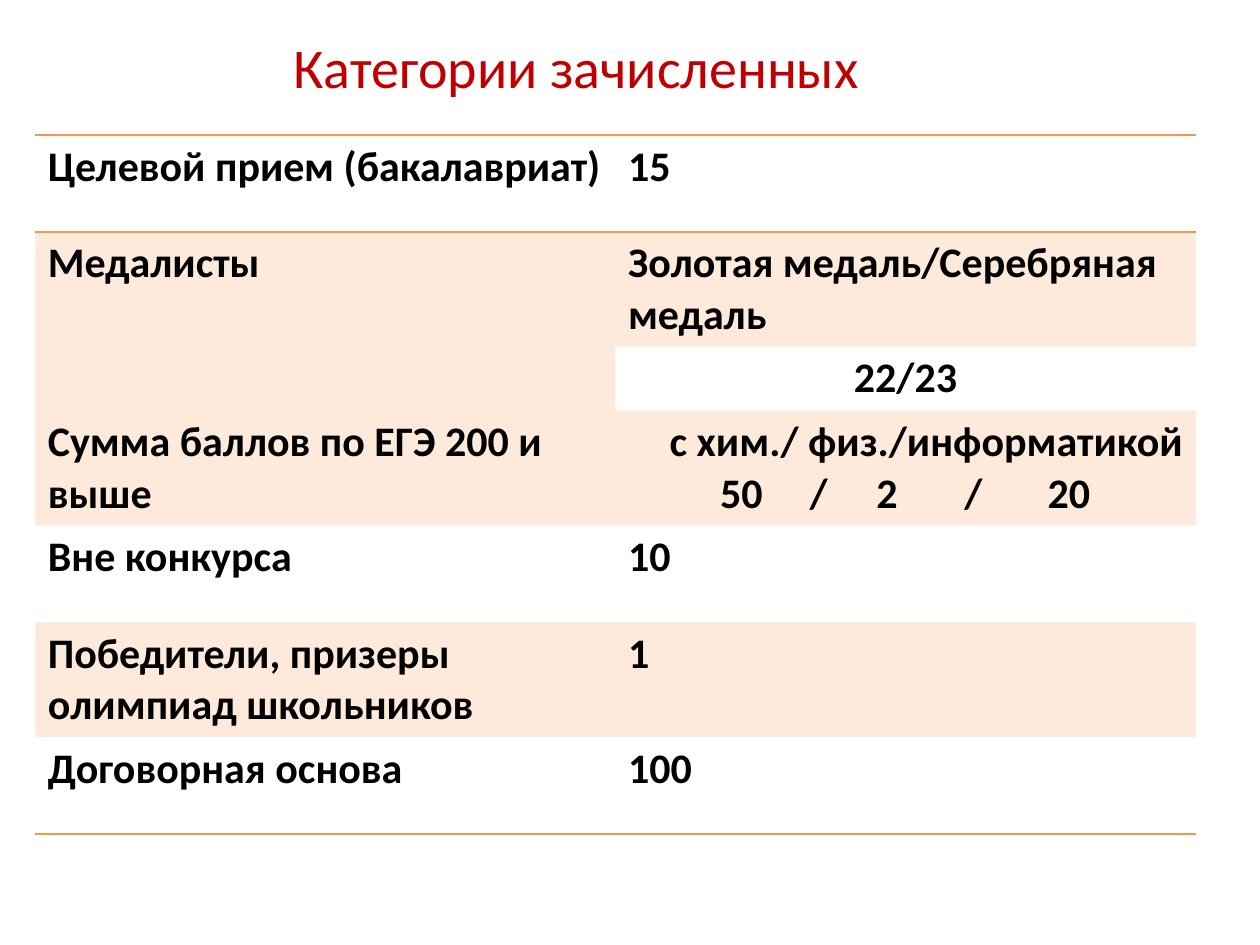
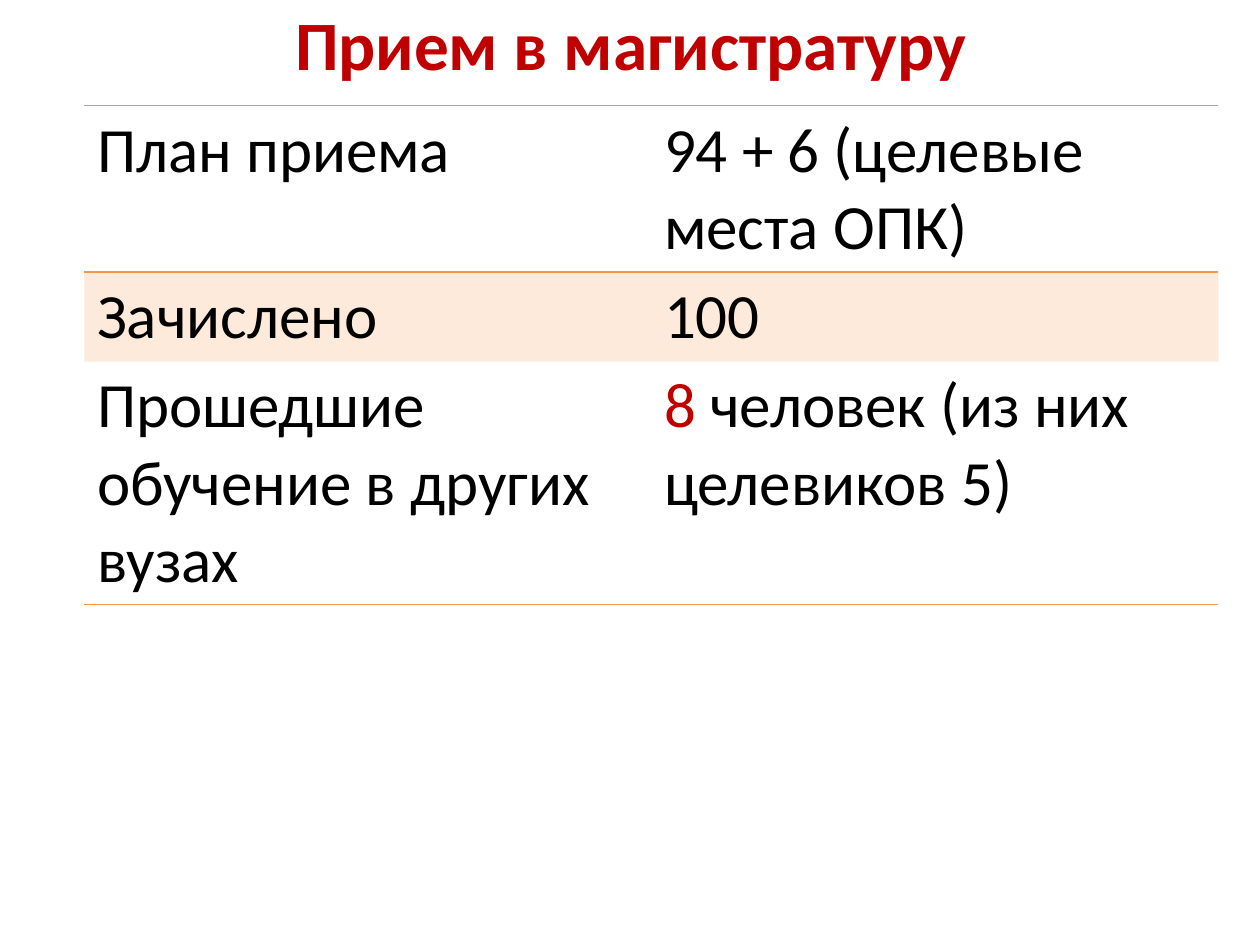
from lxml import etree
from pptx import Presentation
from pptx.dml.color import RGBColor
from pptx.enum.text import MSO_ANCHOR, PP_ALIGN
from pptx.oxml.ns import qn
from pptx.util import Inches, Pt

CENTER, RIGHT = PP_ALIGN.CENTER, PP_ALIGN.RIGHT
TOP, MIDDLE = MSO_ANCHOR.TOP, MSO_ANCHOR.MIDDLE
FONT = "Calibri"
RED = RGBColor(0xC0, 0x00, 0x00)
BLACK = RGBColor(0x00, 0x00, 0x00)
ORANGE = RGBColor(0xF7, 0x96, 0x46)
GRAY = RGBColor(0xA6, 0xA6, 0xA6)
BAND_ALPHA = "20000"
PLAIN_TABLE_STYLE = "{2D5ABB26-0587-4C30-8999-92F81FD0307C}"


def set_font(paragraph, size, color, bold):
    """Apply the shared typeface with the given look to a paragraph."""
    font = paragraph.font
    font.name, font.size, font.bold = FONT, Pt(size), bold
    font.color.rgb = color


def add_title(slide, box, text, size, bold, anchor):
    """Place a centred red title in the box."""
    frame = slide.shapes.add_textbox(*map(Inches, box)).text_frame
    frame.word_wrap = True
    frame.vertical_anchor = anchor
    title = frame.paragraphs[0]
    title.text = text
    title.alignment = CENTER
    set_font(title, size, RED, bold)


def add_rule(cell, side, color, width):
    """Draw one horizontal border of a cell."""
    line = etree.SubElement(cell._tc.get_or_add_tcPr(), qn(f"a:{side}"), w=str(Pt(width)))
    fill = etree.SubElement(line, qn("a:solidFill"))
    etree.SubElement(fill, qn("a:srgbClr"), val=str(color))


def fill_cell(cell, banded):
    """Give a banded cell a translucent orange fill and leave others clear."""
    if not banded:
        cell.fill.background()
        return
    cell.fill.solid()
    cell.fill.fore_color.rgb = ORANGE
    color = cell._tc.tcPr.find(f"{qn('a:solidFill')}/{qn('a:srgbClr')}")
    etree.SubElement(color, qn("a:alpha"), val=BAND_ALPHA)


def add_ruled_table(slide, box, rows, heights, banded, rules, size, bold):
    """Build a two-column table; banded holds cells, rules maps row edges to lines."""
    left, top, width = box
    frame = slide.shapes.add_table(len(rows), 2, Inches(left), Inches(top),
                                   Inches(width), Inches(sum(heights)))
    table = frame.table
    table.first_row = table.horz_banding = False
    table._tbl.tblPr.find(qn("a:tableStyleId")).text = PLAIN_TABLE_STYLE
    for r, (texts, height) in enumerate(zip(rows, heights)):
        table.rows[r].height = Inches(height)
        for c, text in enumerate(texts):
            cell = table.cell(r, c)
            if r == 0:
                add_rule(cell, "lnT", *rules[0])
            if r + 1 in rules:
                add_rule(cell, "lnB", *rules[r + 1])
            fill_cell(cell, (r, c) in banded)
            cell.text_frame.text = text
            for paragraph in cell.text_frame.paragraphs:
                set_font(paragraph, size, BLACK, bold)
    return table


def add_tab_stops(paragraph, positions):
    """Add left tab stops, in inches, to a paragraph."""
    properties = paragraph._p.get_or_add_pPr()
    stops = etree.Element(qn("a:tabLst"))
    for position in positions:
        etree.SubElement(stops, qn("a:tab"), pos=str(Inches(position)), algn="l")
    properties.insert(0, stops)


def build_categories(slide):
    """Fill the slide on categories of enrolled applicants."""
    add_title(slide, (1.46, 0.21, 6.23, 0.64), "Категории зачисленных", 32, False, TOP)
    rows = [
        ("Целевой прием (бакалавриат)", "15"),
        ("Медалисты", "Золотая медаль/Серебряная медаль"),
        ("", "22/23"),
        ("Сумма баллов по ЕГЭ 200 и выше",
         "с хим./ физ./информатикой\n\t50\t/\t2\t/\t20"),
        ("Вне конкурса", "10"),
        ("Победители, призеры олимпиад школьников", "1"),
        ("Договорная основа", "100"),
    ]
    heights = [0.77, 0.91, 0.51, 0.91, 0.77, 0.91, 0.77]
    banded = {(r, c) for r in (1, 3, 5) for c in (0, 1)}
    rules = {edge: (ORANGE, 1) for edge in (0, 1, len(rows))}
    table = add_ruled_table(slide, (0.28, 1.07, 9.21), rows, heights, banded,
                            rules, 24, True)
    table.cell(1, 0).merge(table.cell(2, 0))
    table.cell(2, 1).text_frame.paragraphs[0].alignment = CENTER
    subjects, counts = table.cell(3, 1).text_frame.paragraphs
    subjects.alignment = RIGHT
    add_tab_stops(counts, (0.73, 1.44, 1.97, 2.67, 3.33))


def build_masters(slide):
    """Fill the slide on admission to the master's programme."""
    add_title(slide, (0.51, 0, 9, 0.68), "Прием в магистратуру", 39.6, True, MIDDLE)
    rows = [
        ("План приема", "94 + 6 (целевые места ОПК)"),
        ("Зачислено", "100"),
        ("Прошедшие обучение в других вузах", "8"),
    ]
    rules = {0: (GRAY, 0.5), 1: (ORANGE, 1), 3: (ORANGE, 1)}
    table = add_ruled_table(slide, (0.67, 0.84, 9), rows, [1.32, 0.71, 1.93],
                            {(1, 0), (1, 1)}, rules, 36, False)
    newcomers = table.cell(2, 1).text_frame.paragraphs[0]
    newcomers.runs[0].font.color.rgb = RED
    remainder = newcomers.add_run()
    remainder.text = " человек (из них целевиков 5)"
    remainder.font.color.rgb = BLACK


def main():
    """Build and save the presentation."""
    deck = Presentation()
    deck.slide_width, deck.slide_height = Inches(10), Inches(7.5)
    for build in (build_categories, build_masters):
        build(deck.slides.add_slide(deck.slide_layouts[6]))
    deck.save("out.pptx")


if __name__ == "__main__":
    main()
